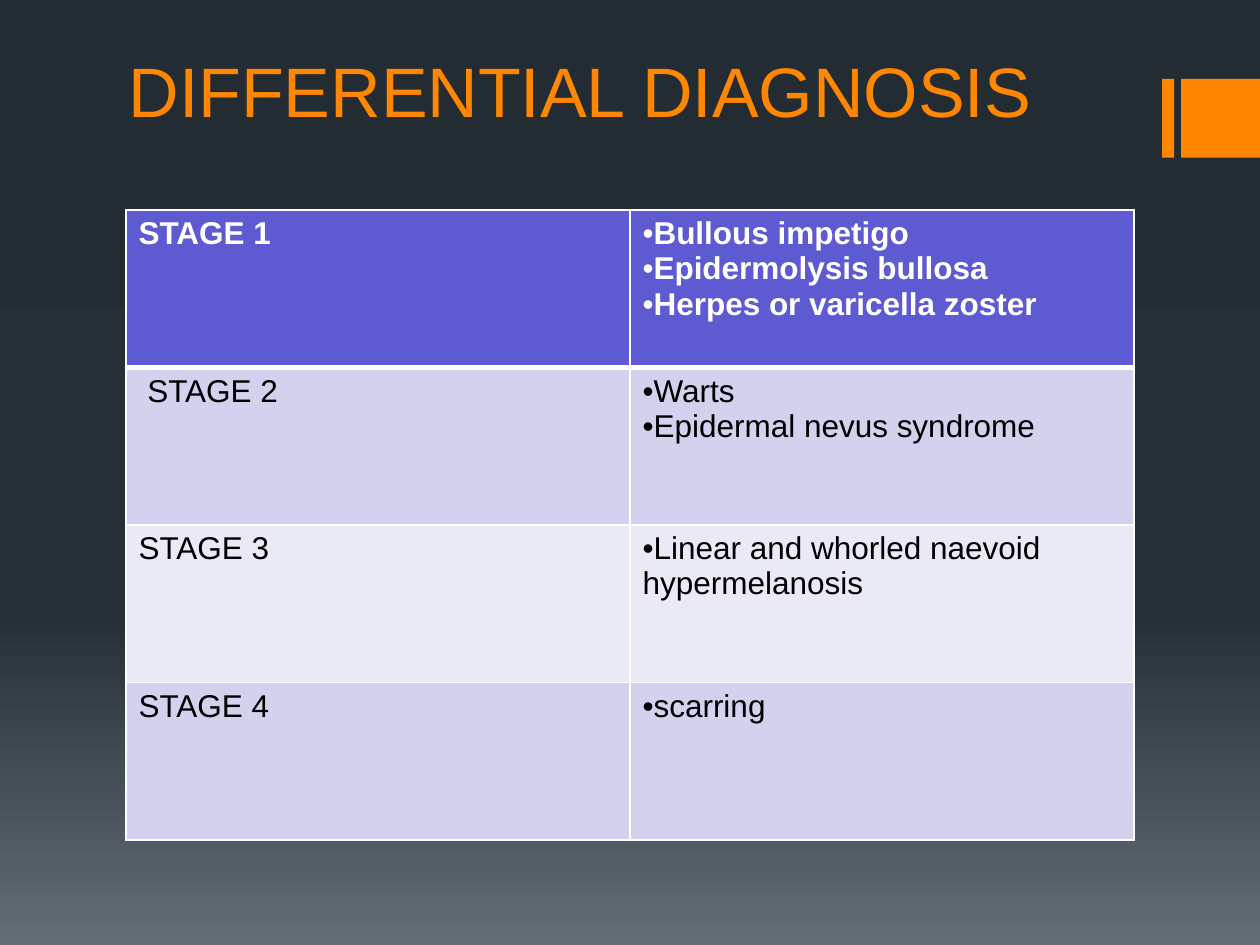
import lxml.etree
import pptx
import pptx.dml.color
import pptx.enum.shapes
import pptx.enum.text
import pptx.oxml
import pptx.oxml.ns
import pptx.util

Cm = pptx.util.Cm
RGB = pptx.dml.color.RGBColor
FONT = "Arial"
ORANGE = RGB(0xFF, 0x86, 0x00)
WHITE = RGB(0xFF, 0xFF, 0xFF)
BLACK = RGB(0x00, 0x00, 0x00)
VIOLET = RGB(0x5D, 0x5A, 0xD2)
LILAC = RGB(0xD2, 0xD2, 0xEE)
PALE = RGB(0xEA, 0xEA, 0xF7)
STOPS = [
    (0, RGB(0x24, 0x2C, 0x33)),
    (65, RGB(0x27, 0x30, 0x37)),
    (100, RGB(0x63, 0x6D, 0x76)),
]
STAGES = [
    ("STAGE 1", ["Bullous impetigo", "Epidermolysis bullosa", "Herpes or varicella zoster"]),
    (" STAGE 2", ["Warts", "Epidermal nevus syndrome"]),
    ("STAGE 3", ["Linear and whorled naevoid hypermelanosis"]),
    ("STAGE 4", ["scarring"]),
]


def add_node(parent, tag, **attrs):
    return lxml.etree.SubElement(parent, pptx.oxml.ns.qn(tag), **attrs)


def write(frame, lines, size=18, color=BLACK, bold=False, bullet=None):
    for i, line in enumerate(lines):
        par = frame.paragraphs[0] if i == 0 else frame.add_paragraph()
        par.alignment = pptx.enum.text.PP_ALIGN.LEFT
        run = par.add_run()
        run.text = line
        run.font.name = FONT
        run.font.size = pptx.util.Pt(size)
        run.font.bold = bold
        run.font.color.rgb = color
        if bullet:
            props = par._p.get_or_add_pPr()
            props.set("marL", "0")
            props.set("indent", "0")
            add_node(props, "a:buFont", typeface=FONT)
            add_node(props, "a:buChar", char=bullet)


def paint_back(slide):
    fill = slide.background.fill
    fill.gradient()
    fill.gradient_angle = 270
    stops = fill._fill._gradFill.find(pptx.oxml.ns.qn("a:gsLst"))
    for old in list(stops):
        stops.remove(old)
    for place, color in STOPS:
        stop = add_node(stops, "a:gs", pos=str(place * 1000))
        add_node(stop, "a:srgbClr", val=str(color))


def add_badge(slide, left, top, width, height):
    bar = Cm(0.24)
    for x, wide in ((left, bar), (left + width - height, height)):
        rect = slide.shapes.add_shape(
            pptx.enum.shapes.MSO_SHAPE.RECTANGLE, x, top, wide, height)
        rect.shadow.inherit = False
        rect.fill.solid()
        rect.fill.fore_color.rgb = ORANGE
        rect.line.fill.background()


def add_title(slide, left, top, width, height):
    title = slide.shapes.title
    title.left, title.top, title.width, title.height = left, top, width, height
    frame = title.text_frame
    frame.auto_size = pptx.enum.text.MSO_AUTO_SIZE.NONE
    frame.vertical_anchor = pptx.enum.text.MSO_ANCHOR.BOTTOM
    write(frame, ["DIFFERENTIAL DIAGNOSIS"], size=40, color=ORANGE)


def rule_cell(cell, top, base):
    props = cell._tc.get_or_add_tcPr()
    for side, width in (("L", 1), ("R", 1), ("T", top), ("B", base)):
        line = add_node(props, f"a:ln{side}", w=str(pptx.util.Pt(width)))
        add_node(add_node(line, "a:solidFill"), "a:srgbClr", val=str(WHITE))


def add_stages(slide, left, top, width, height):
    table = slide.shapes.add_table(len(STAGES), 2, left, top, width, height).table
    for r, (stage, signs) in enumerate(STAGES):
        head = r == 0
        for c, (lines, bullet) in enumerate((([stage], None), (signs, "•"))):
            cell = table.cell(r, c)
            rule_cell(cell, 3 if r == 1 else 1, 3 if head else 1)
            cell.fill.solid()
            cell.fill.fore_color.rgb = VIOLET if head else LILAC if r % 2 else PALE
            write(cell.text_frame, lines, color=WHITE if head else BLACK,
                  bold=head, bullet=bullet)


def main():
    deck = pptx.Presentation()
    deck.slide_width, deck.slide_height = Cm(25.4), Cm(19.05)
    slide = deck.slides.add_slide(deck.slide_layouts[5])
    paint_back(slide)
    add_badge(slide, Cm(23.43), Cm(1.59), Cm(1.97), Cm(1.59))
    add_title(slide, Cm(2.34), Cm(0.42), Cm(20.32), Cm(2.36))
    add_stages(slide, Cm(2.54), Cm(4.23), Cm(20.32), Cm(12.7))
    deck.save("out.pptx")


if __name__ == "__main__":
    main()
